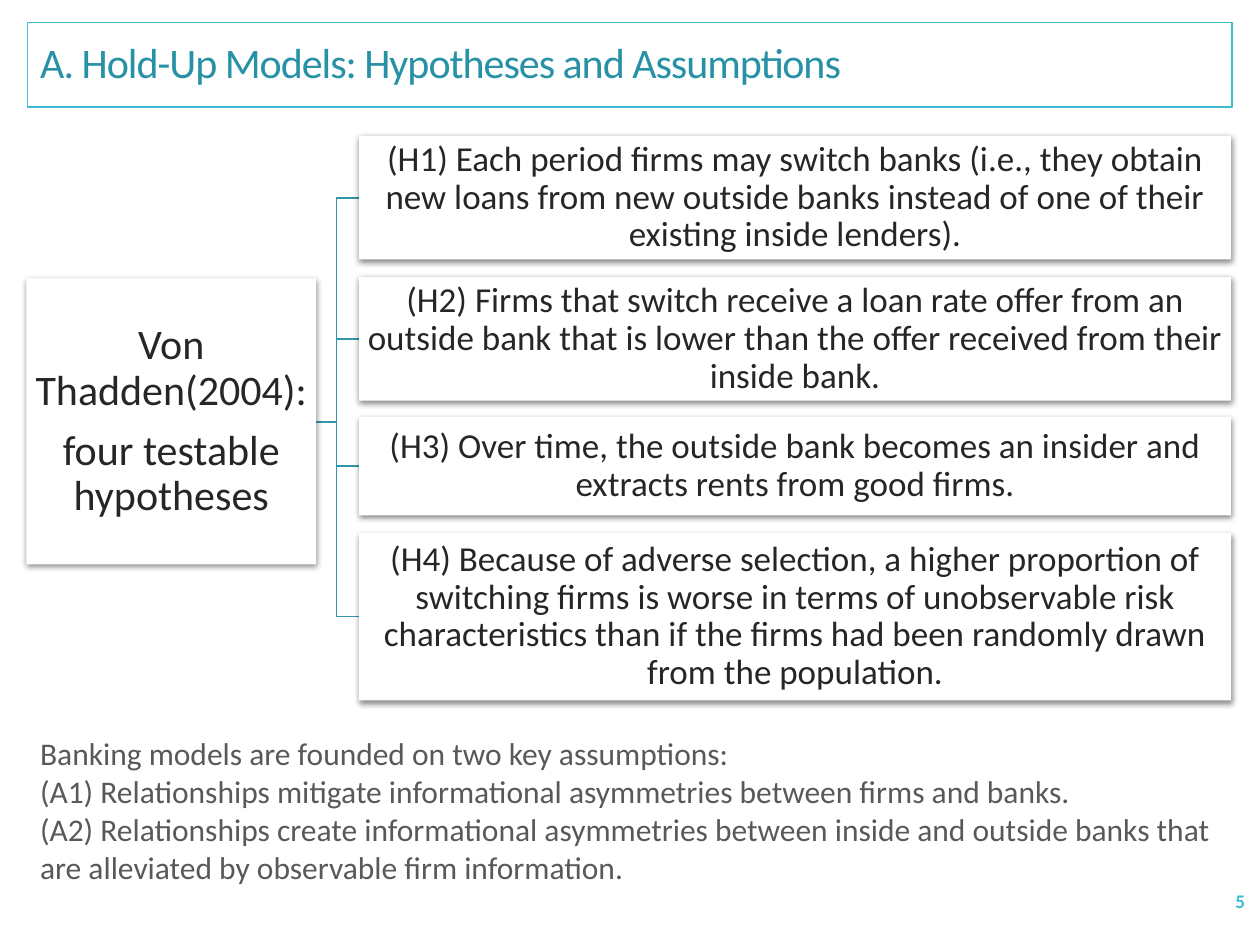
from lxml import etree
from pptx import Presentation
from pptx.dml.color import RGBColor as Rgb
from pptx.enum.shapes import MSO_SHAPE as Shape
from pptx.enum.text import MSO_ANCHOR as Anchor, PP_ALIGN as Align
from pptx.oxml import parse_xml
from pptx.oxml.ns import nsdecls
from pptx.util import Inches, Pt

COLORS = {
    "white": "FFFFFF", "title": "2791A6", "accent": "40BAD2",
    "link": "3395A8", "dark": "262626", "gray": "595959", "shade": "000000",
}
ROOT = ["Von Thadden(2004):", "four testable hypotheses"]
# top, height, text
HYPS = [
    (1.08, 0.98, "(H1) Each period firms may switch banks (i.e., they obtain new loans "
     "from new outside banks instead of one of their existing inside lenders)."),
    (2.2, 0.98, "(H2) Firms that switch receive a loan rate offer from an outside bank "
     "that is lower than the offer received from their inside bank."),
    (3.31, 0.78, "(H3) Over time, the outside bank becomes an insider and extracts rents "
     "from good firms."),
    (4.23, 1.33, "(H4) Because of adverse selection, a higher proportion of switching firms "
     "is worse in terms of unobservable risk characteristics than if the firms had been "
     "randomly drawn from the population."),
]
NOTES = (
    "Banking models are founded on two key assumptions:\n"
    "(A1) Relationships mitigate informational asymmetries between firms and banks.\n"
    "(A2) Relationships create informational asymmetries between inside and outside banks "
    "that are alleviated by observable firm information."
)
HYP_X, HYP_W = 2.85, 6.92
LINK_X, BEND_X, MID_Y = 2.49, 2.67, 3.35


def color(name):
    return Rgb.from_string(COLORS[name])


def write(shape, paras, size, ink, align=Align.LEFT, anchor=Anchor.MIDDLE,
          inset=None, bold=False, **form):
    """Fill a shape with paragraphs; form holds further paragraph values."""
    frame = shape.text_frame
    frame.word_wrap = True
    frame.vertical_anchor = anchor
    if inset is not None:
        for side in ("left", "right", "top", "bottom"):
            setattr(frame, f"margin_{side}", Inches(inset))
    for i, text in enumerate(paras):
        para = frame.add_paragraph() if i else frame.paragraphs[0]
        para.text = text
        for key, value in {"alignment": align, **form}.items():
            setattr(para, key, value)
        for run in para.runs:
            font = run.font
            for key, value in {"name": "Calibri", "size": Pt(size), "bold": bold}.items():
                setattr(font, key, value)
            font.color.rgb = color(ink)


def add_box(slide, *place):
    box = slide.shapes.add_shape(Shape.RECTANGLE, *map(Inches, place))
    box.shadow.inherit = False
    box.fill.solid()
    box.fill.fore_color.rgb = color("white")
    box.line.fill.background()
    return box


def add_label(slide, place, text, size, ink, **form):
    box = slide.shapes.add_textbox(*map(Inches, place))
    write(box, [text], size, ink, **form)


def add_title(slide, text):
    box = add_box(slide, 0.22, 0.18, 9.56, 0.67)
    box.line.color.rgb = color("accent")
    box.line.width = Pt(0.85)
    write(box, [text], 24, "title", line_spacing=0.9)
    for run in box.text_frame.paragraphs[0].runs:
        run.font._element.set("spc", "-60")


def add_card(slide, place, paras, size, inset):
    """White box with a soft shadow below it."""
    box = add_box(slide, *place)
    effects = box._element.spPr.find("{*}effectLst")
    shade = parse_xml(
        f'<a:outerShdw {nsdecls("a")} blurRad="{Pt(3.5)}" dist="{Pt(1.1)}" '
        f'dir="5400000" algn="ctr" rotWithShape="0"/>')
    tint = etree.SubElement(shade, shade.tag.replace("outerShdw", "srgbClr"),
                            val=COLORS["shade"])
    etree.SubElement(tint, shade.tag.replace("outerShdw", "alpha"), val="45000")
    effects.append(shade)
    write(box, paras, size, "dark", align=Align.CENTER, inset=inset,
          line_spacing=0.9, space_after=Pt(0.35 * size))


def add_link(slide, y):
    """Elbow line from the root card to a hypothesis centred at y."""
    points = [(BEND_X, MID_Y), (BEND_X, y), (HYP_X, y)]
    pen = slide.shapes.build_freeform(Inches(LINK_X), Inches(MID_Y))
    pen.add_line_segments([tuple(map(Inches, spot)) for spot in points], close=False)
    link = pen.convert_to_shape()
    link.shadow.inherit = False
    link.fill.background()
    link.line.color.rgb = color("link")
    link.line.width = Pt(0.85)


def main():
    deck = Presentation()
    deck.slide_width, deck.slide_height = Inches(10), Inches(7.5)
    slide = deck.slides.add_slide(deck.slide_layouts[6])
    add_title(slide, "A. Hold-Up Models: Hypotheses and Assumptions")
    for top, height, _ in HYPS:
        add_link(slide, top + height / 2)
    add_card(slide, (0.21, 2.21, 2.3, 2.27), ROOT, 24, 0.02)
    for top, height, text in HYPS:
        add_card(slide, (HYP_X, top, HYP_W, height), [text], 20, 0.01)
    add_label(slide, (0.22, 5.78, 9.56, 1.31), NOTES, 18, "gray", anchor=Anchor.TOP)
    add_label(slide, (8.72, 6.95, 1.26, 0.4), "5", 11, "accent",
              align=Align.RIGHT, bold=True)
    deck.save("out.pptx")


if __name__ == "__main__":
    main()
